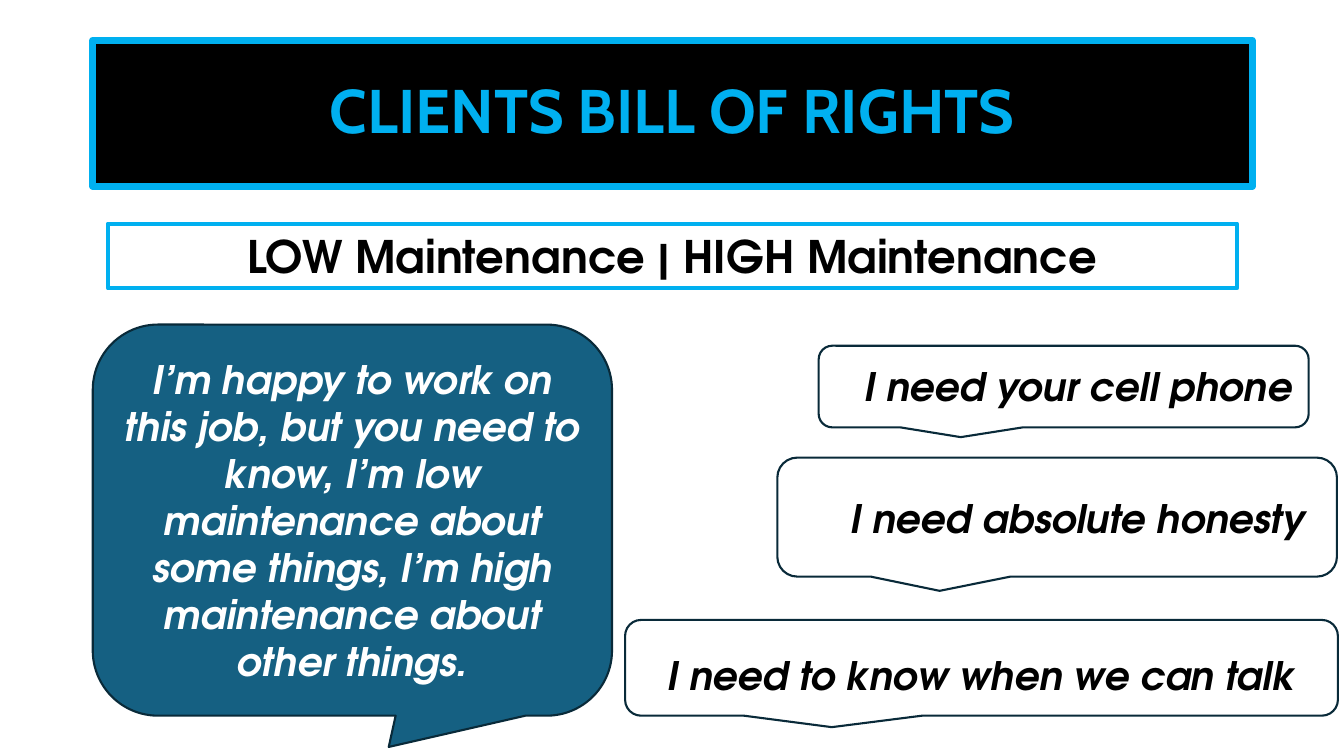
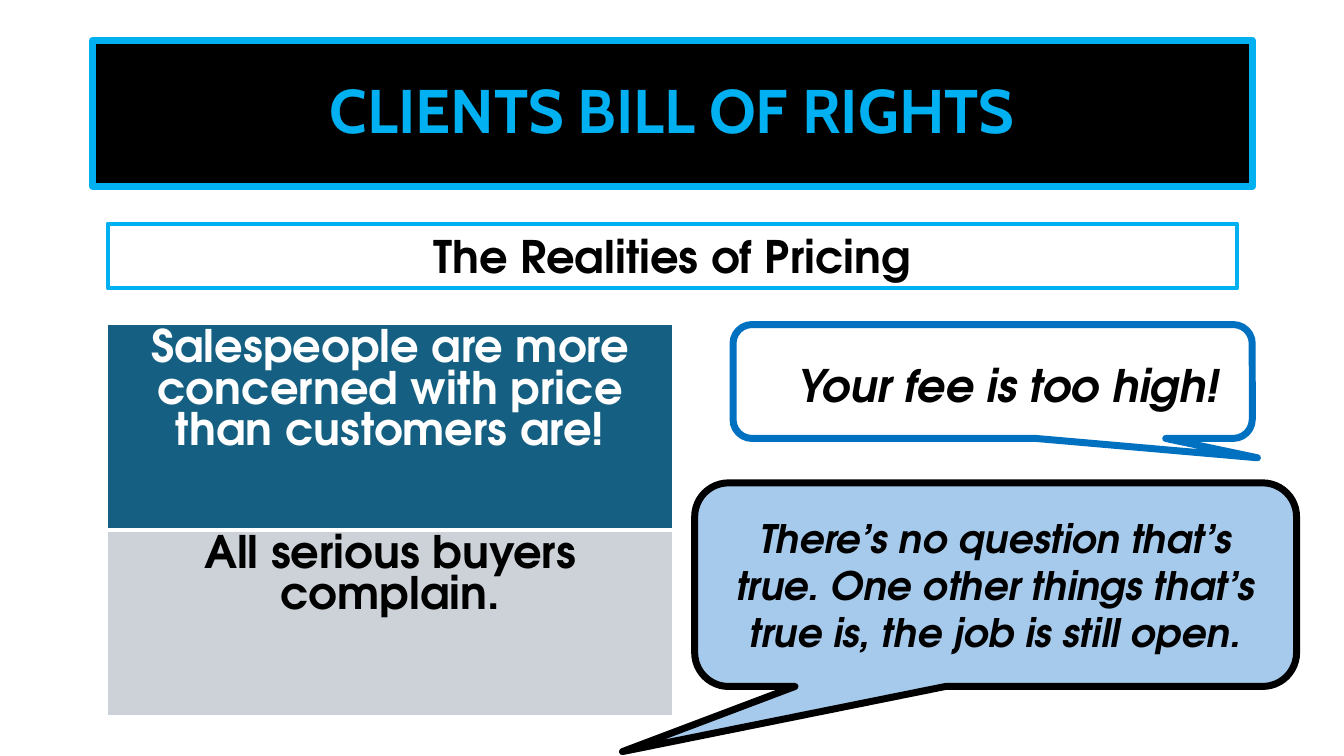
from dataclasses import dataclass

from lxml import etree
from pptx import Presentation
from pptx.dml.color import RGBColor
from pptx.enum import shapes, text
from pptx.oxml import ns
from pptx.util import Inches, Pt

COLOURS = {
    "black": "000000",
    "white": "FFFFFF",
    "sky": "00B0F0",
    "teal": "156082",
    "dark_teal": "092A39",
    "blue": "0070C0",
    "pale_blue": "A6CAEC",
    "grey": "CCD2D8",
}
TITLE_FONT = "Cabin"
BODY_FONT = "TeX Gyre Adventor"
TITLE = "CLIENTS BILL OF RIGHTS"


@dataclass(frozen=True)
class Area:
    left: float
    top: float
    width: float
    height: float

    def lengths(self) -> list:
        return [Inches(n) for n in (self.left, self.top, self.width, self.height)]


@dataclass(frozen=True)
class Callout:
    area: Area
    line: str = "dark_teal"
    line_width: float = 1.5
    fill: str | None = None
    tail: tuple[float, float] = (-0.21, 0.62)
    words: str = ""
    colour: str = "black"


@dataclass(frozen=True)
class Label:
    area: Area
    words: str
    size: int = 28


@dataclass(frozen=True)
class Row:
    words: str
    height: float
    fill: str
    colour: str


TITLE_AREA = Area(0.92, 0.4, 11.5, 1.45)
SUBTITLE_AREA = Area(1.07, 2.22, 11.2, 0.64)
TABLE_AREA = Area(1.07, 3.22, 5.6, 3.88)

MAINTENANCE_CALLOUTS = [
    Callout(
        Area(0.92, 3.22, 5.15, 3.88), fill="teal", tail=(0.07, 0.58), colour="white",
        words="I’m happy to work on this job, but you need to know, I’m low "
              "maintenance about some things, I’m high maintenance about other things.",
    ),
    Callout(Area(8.12, 3.43, 4.86, 0.81)),
    Callout(Area(7.71, 4.54, 5.55, 1.18)),
    Callout(Area(6.2, 6.15, 7.07, 0.95)),
]
MAINTENANCE_LABELS = [
    Label(Area(7.35, 4.85, 6.68, 0.57), "I need absolute honesty"),
    Label(Area(8.12, 3.55, 5.15, 0.57), "I need your cell phone"),
    Label(Area(6.39, 6.41, 6.68, 0.57), "I need to know when we can talk"),
]
PRICING_ROWS = [
    Row("Salespeople are more concerned with price than customers are!",
        2.04, "teal", "white"),
    Row("All serious buyers complain.", 1.84, "grey", "black"),
]
PRICING_CALLOUTS = [
    Callout(Area(7.27, 3.22, 5.15, 1.13), "blue", 5, tail=(0.51, 0.67)),
    Callout(
        Area(6.89, 4.79, 5.97, 2.02), "black", 5, "pale_blue", (-0.62, 0.82),
        "There’s no question that’s true. One other things that’s true is, "
        "the job is still open.",
    ),
]
PRICING_LABELS = [Label(Area(6.66, 3.5, 6.68, 0.64), "Your fee is too high!", 32)]


def rgb(name: str) -> RGBColor:
    return RGBColor.from_string(COLOURS[name])


def write(frame, words: str, size: int, colour: str, italic: bool = False,
          font: str = BODY_FONT, spacing: float | None = None) -> None:
    """Fill a text frame with one centred bold paragraph."""
    frame.text = words
    frame.word_wrap = True
    para = frame.paragraphs[0]
    para.alignment = text.PP_ALIGN.CENTER
    para.line_spacing = spacing
    style = para.runs[0].font
    style.name, style.size = font, Pt(size)
    style.bold, style.italic = True, italic
    style.color.rgb = rgb(colour)


def paint(shape, fill: str | None, line: str, line_width: float) -> None:
    if fill:
        shape.fill.solid()
        shape.fill.fore_color.rgb = rgb(fill)
    else:
        shape.fill.background()
    shape.line.color.rgb = rgb(line)
    shape.line.width = Pt(line_width)


def add_headed_slide(deck, subtitle: str):
    """Add a slide with the shared title band and a framed subtitle."""
    slide = deck.slides.add_slide(deck.slide_layouts[5])
    title = slide.shapes.title
    title.left, title.top, title.width, title.height = TITLE_AREA.lengths()
    paint(title, "black", "sky", 5)
    write(title.text_frame, TITLE, 44, "sky", font=TITLE_FONT, spacing=0.9)
    title.text_frame.vertical_anchor = text.MSO_ANCHOR.MIDDLE

    box = slide.shapes.add_textbox(*SUBTITLE_AREA.lengths())
    paint(box, None, "sky", 3)
    write(box.text_frame, subtitle, 32, "black")
    return slide


def add_callout(slide, callout: Callout) -> None:
    bubble = slide.shapes.add_shape(
        shapes.MSO_SHAPE.ROUNDED_RECTANGULAR_CALLOUT, *callout.area.lengths())
    bubble.shadow.inherit = False
    bubble.adjustments[0], bubble.adjustments[1] = callout.tail
    paint(bubble, callout.fill, callout.line, callout.line_width)
    if callout.words:
        write(bubble.text_frame, callout.words, 28, callout.colour, italic=True)
        bubble.text_frame.vertical_anchor = text.MSO_ANCHOR.MIDDLE


def add_label(slide, label: Label) -> None:
    box = slide.shapes.add_textbox(*label.area.lengths())
    write(box.text_frame, label.words, label.size, "black", italic=True)


def set_borders(cell, widths: dict[str, float]) -> None:
    """Give a cell white borders; the keys are L, R, T and B, in that order."""
    properties = cell._tc.get_or_add_tcPr()
    for index, (side, width) in enumerate(widths.items()):
        border = etree.Element(ns.qn(f"a:ln{side}"), w=str(Pt(width)))
        fill = etree.SubElement(border, ns.qn("a:solidFill"))
        etree.SubElement(fill, ns.qn("a:srgbClr"), val=COLOURS["white"])
        properties.insert(index, border)


def add_statement_table(slide, rows: list[Row]) -> None:
    table = slide.shapes.add_table(len(rows), 1, *TABLE_AREA.lengths()).table
    last = len(rows) - 1
    for index, row in enumerate(rows):
        table.rows[index].height = Inches(row.height)
        cell = table.cell(index, 0)
        cell.fill.solid()
        cell.fill.fore_color.rgb = rgb(row.fill)
        write(cell.text_frame, row.words, 32, row.colour)
        set_borders(cell, {"L": 1, "R": 1, "T": 3 if index else 1,
                           "B": 1 if index == last else 3})


def add_bubbles(slide, callouts: list[Callout], labels: list[Label]) -> None:
    for callout in callouts:
        add_callout(slide, callout)
    for label in labels:
        add_label(slide, label)


def main() -> None:
    deck = Presentation()
    deck.slide_width, deck.slide_height = Inches(13.33), Inches(7.5)

    maintenance = add_headed_slide(deck, "LOW Maintenance | HIGH Maintenance")
    add_bubbles(maintenance, MAINTENANCE_CALLOUTS, MAINTENANCE_LABELS)

    pricing = add_headed_slide(deck, "The Realities of Pricing")
    add_statement_table(pricing, PRICING_ROWS)
    add_bubbles(pricing, PRICING_CALLOUTS, PRICING_LABELS)

    deck.save("out.pptx")


if __name__ == "__main__":
    main()
